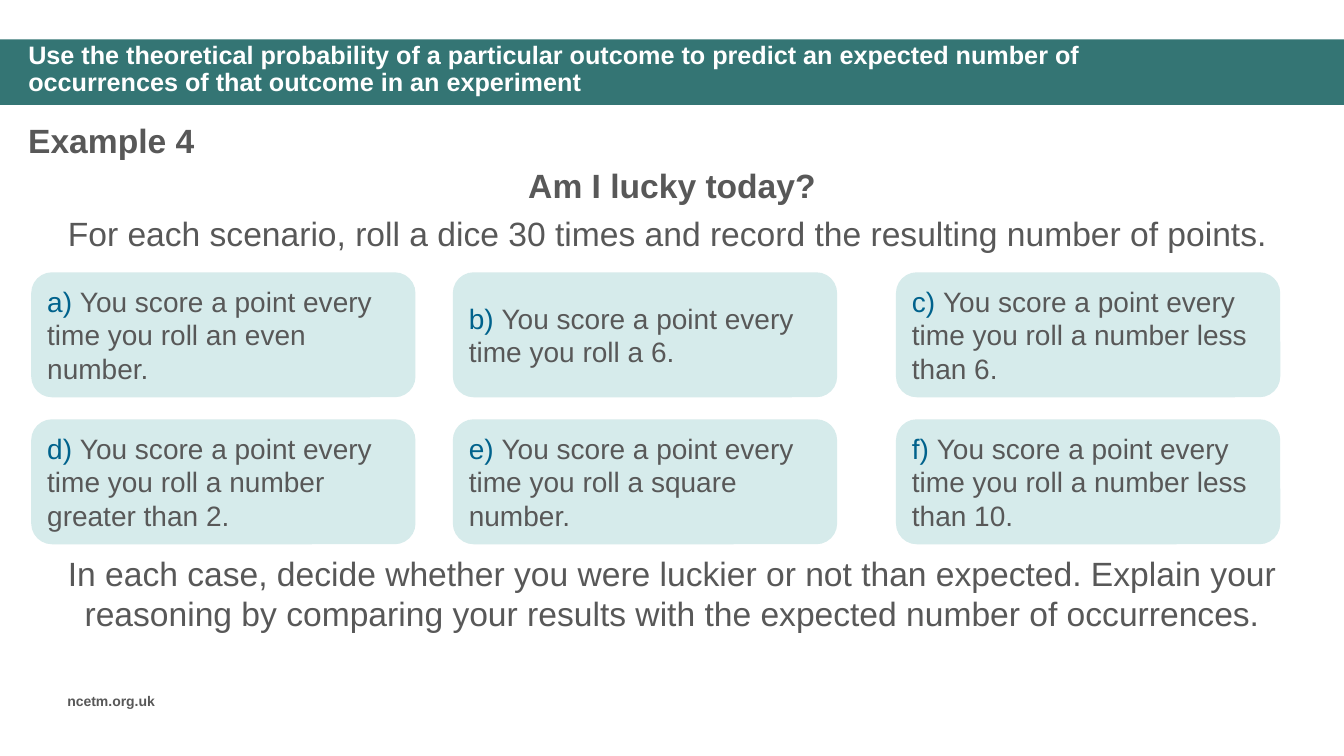
from pptx import Presentation
from pptx.dml.color import RGBColor
from pptx.enum.shapes import MSO_SHAPE
from pptx.enum.text import MSO_ANCHOR, MSO_AUTO_SIZE, PP_ALIGN
from pptx.util import Pt

COLORS = {"band": "347574", "card": "D6EBEB", "text": "585858",
          "letter": "00628C", "white": "FFFFFF"}


def add_text(para, text, size=24, color="text", bold=False, align=PP_ALIGN.LEFT):
    para.alignment = align
    span = para.add_run()
    span.text = text
    span.font.name = "Arial"
    span.font.size = Pt(size)
    span.font.bold = bold
    span.font.color.rgb = RGBColor.from_string(COLORS[color])


def add_panel(kind, left, top, width, height, color):
    panel = page.shapes.add_shape(kind, Pt(left), Pt(top), Pt(width), Pt(height))
    panel.shadow.inherit = False
    panel.fill.solid()
    panel.fill.fore_color.rgb = RGBColor.from_string(COLORS[color])
    panel.line.fill.background()
    return panel


deck = Presentation()
deck.slide_width, deck.slide_height = Pt(960), Pt(540)
page = deck.slides.add_slide(deck.slide_layouts[5])

# Title on its band
add_panel(MSO_SHAPE.RECTANGLE, 0, 28.2, 960, 46.7, "band")
title = page.shapes.title
title.left, title.top, title.width, title.height = Pt(13), Pt(33), Pt(834), Pt(34)
title.text_frame.word_wrap = True
title.text_frame.auto_size = MSO_AUTO_SIZE.NONE
title.text_frame.vertical_anchor = MSO_ANCHOR.MIDDLE
title_para = title.text_frame.paragraphs[0]
title_para.line_spacing = 0.9
add_text(title_para, "Use the theoretical probability of a particular outcome to predict "
         "an expected number of occurrences of that outcome in an experiment",
         size=18, color="white", bold=True)
# Bring the title in front of the band
title.element.getparent().append(title.element)

# Text boxes: position, then paragraphs with their format
center = PP_ALIGN.CENTER
text_boxes = [
    (41, 491, 87, 19.5, [("ncetm.org.uk", {"size": 10, "bold": True})]),
    (13, 82, 480, 36, [("Example 4", {"bold": True})]),
    (36.5, 114, 887, 71, [
        ("Am I lucky today?", {"bold": True, "align": center}),
        ("For each scenario, roll a dice 30 times and record the resulting "
         "number of points. ", {"align": center})]),
    (26.5, 391.5, 907, 65.5, [
        ("In each case, decide whether you were luckier or not than expected. "
         "Explain your reasoning by comparing your results with the expected "
         "number of occurrences.", {"align": center})]),
]
for left, top, width, height, lines in text_boxes:
    box = page.shapes.add_textbox(Pt(left), Pt(top), Pt(width), Pt(height))
    box.text_frame.word_wrap = True
    for index, (text, style) in enumerate(lines):
        if index == 0:
            para = box.text_frame.paragraphs[0]
        else:
            para = box.text_frame.add_paragraph()
            para.space_before = Pt(6)
        add_text(para, text, **style)

# Scenario cards, three to a row
endings = ["an even number.", "a 6.", "a number less than 6.",
           "a number greater than 2.", "a square number.", "a number less than 10."]
card_lefts = [22.3, 323.5, 640]
for index, (letter, ending) in enumerate(zip("abcdef", endings)):
    row, column = divmod(index, 3)
    card = add_panel(MSO_SHAPE.ROUNDED_RECTANGLE, card_lefts[column],
                     194.5 + 105 * row, 274.5, 89.3, "card")
    card.text_frame.word_wrap = True
    card.text_frame.vertical_anchor = MSO_ANCHOR.MIDDLE
    para = card.text_frame.paragraphs[0]
    add_text(para, f"{letter}) ", size=20, color="letter")
    add_text(para, f"You score a point every time you roll {ending}", size=20)

deck.save("out.pptx")
